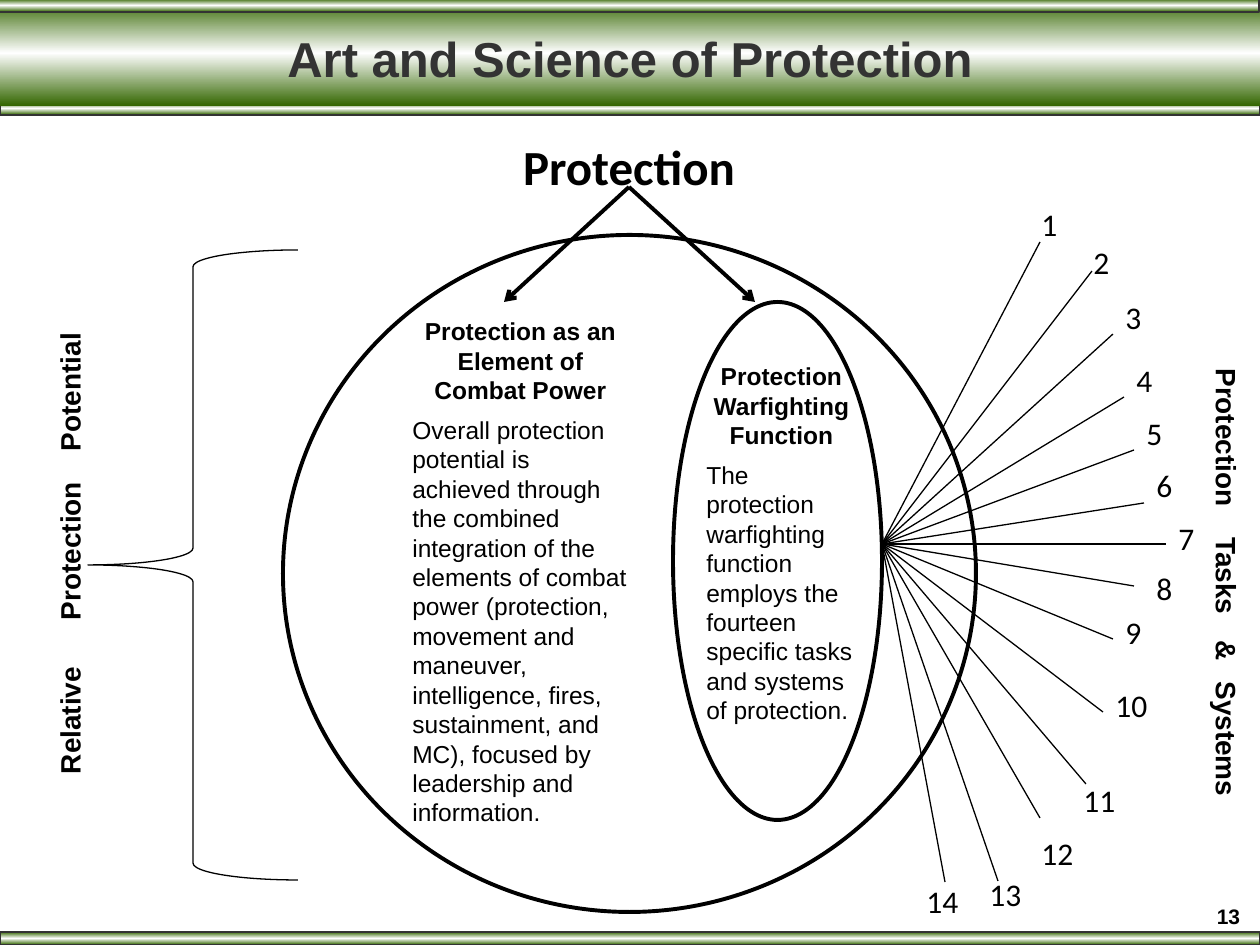
from copy import deepcopy
from dataclasses import dataclass
from lxml.etree import SubElement as Sub
from pptx import Presentation
from pptx.dml.color import RGBColor as RGB
from pptx.enum.shapes import MSO_CONNECTOR as Link, MSO_SHAPE as Kind
from pptx.enum.text import MSO_ANCHOR as Anchor, PP_ALIGN as Align
from pptx.oxml.ns import qn
from pptx.util import Pt

EMU = 914400 / 126


@dataclass(frozen=True)
class Theme:
    green: str = "336600"
    white: str = "FFFFFF"
    black: str = "000000"
    gray: str = "333333"
    sans: str = "Arial"
    soft: str = "Calibri"
    head: int = 28
    num: int = 18
    side: int = 16
    body: int = 14
    page: int = 12
    thin: float = 0.75
    bold: float = 2.25


T = Theme()

# Boxes are left, top, width, height in px
BARS = [((0, 102, 1260, 13), True), ((0, 932, 1260, 13), True),
        ((0, 0, 1260, 106), False), ((-1, -1, 1260, 13), True)]
OVALS = [(283, 235, 693, 677), (673, 302, 209, 518)]
BRACE = (88, 250, 210, 630)

PANELS = [
    ((400, 310, 241, 475), "Protection as an Element of Combat Power",
     "Overall protection potential is achieved through the combined "
     "integration of the elements of combat power (protection, movement and "
     "maneuver, intelligence, fires, sustainment, and MC), focused by "
     "leadership and information."),
    ((694, 355, 175, 315), "Protection Warfighting Function",
     "The protection warfighting function employs the fourteen specific "
     "tasks and systems of protection."),
]

# Words of each turned label, with the tab stops between them
SIDES = [
    ((964, 595, 525, 47), 90, ["Protection", "Tasks", "&", "Systems"],
     [169, 272, 313]),
    ((-229, 464, 598, 47), 270, ["Relative", "Protection", "Potential"],
     [154, 323]),
]

HUB = (882, 544)
# Ray end, then label left, top and width; numbered in order
RAYS = [
    ((1040, 242), (1029, 199, 42)), ((1092, 271), (1081, 237, 42)),
    ((1113, 334), (1113, 292, 32)), ((1124, 397), (1124, 355, 42)),
    ((1134, 450), (1134, 408, 42)), ((1144, 503), (1144, 460, 42)),
    ((1166, 544), (1166, 513, 42)), ((1134, 586), (1144, 563, 42)),
    ((1113, 639), (1113, 607, 42)), ((1103, 712), (1103, 680, 63)),
    ((1086, 784), (1071, 775, 73)), ((1040, 818), (1029, 828, 73)),
    ((998, 881), (977, 869, 105)), ((945, 882), (914, 876, 105)),
]
PEAK = (629, 187)
TIPS = [(755, 302), (504, 302)]


def emu(*nums):
    return [round(n * EMU) for n in nums]


def stroke(line, width, color=T.black):
    line.color.rgb = RGB.from_string(color)
    line.width = Pt(width)


def shape(kind, box):
    item = slide.shapes.add_shape(kind, *emu(*box))
    item.shadow.inherit = False
    return item


def bar(box, edged):
    """Draw a strip shaded green, white, green from top to bottom."""
    item = shape(Kind.RECTANGLE, box)
    item.fill.gradient()
    item.fill.gradient_angle = 90
    for stop in item.fill.gradient_stops:
        stop.color.rgb = RGB.from_string(T.green)
    first = item._element.spPr.find(".//" + qn("a:gs"))
    first.addnext(deepcopy(first))
    mid = item.fill.gradient_stops[1]
    mid.position = 0.5
    mid.color.rgb = RGB.from_string(T.white)
    if edged:
        stroke(item.line, T.thin, T.gray)
    else:
        item.line.fill.background()


def link(start, end, width, arrow=False):
    item = slide.shapes.add_connector(Link.STRAIGHT, *emu(*start, *end))
    stroke(item.line, width)
    if arrow:
        Sub(item.line._get_or_add_ln(), qn("a:tailEnd"), type="arrow")
    Sub(item._element.spPr, qn("a:effectLst"))


def put(para, words, size, font=T.sans, bold=True, color=T.black, **form):
    """Fill a paragraph; form holds its paragraph settings."""
    para.text = words
    look = {"size": Pt(size), "name": font, "bold": bold}
    for key, val in look.items():
        setattr(para.font, key, val)
    para.font.color.rgb = RGB.from_string(color)
    for key, val in form.items():
        setattr(para, key, val)


def frame(box, turn=0, wrap=True):
    item = slide.shapes.add_textbox(*emu(*box))
    item.rotation = turn
    item.text_frame.word_wrap = wrap
    return item.text_frame


deck = Presentation()
deck.slide_width, deck.slide_height = emu(1260, 945)
slide = deck.slides.add_slide(deck.slide_layouts[6])

for box, edged in BARS:
    bar(box, edged)

for box in OVALS:
    oval = shape(Kind.OVAL, box)
    oval.fill.solid()
    oval.fill.fore_color.rgb = RGB.from_string(T.white)
    stroke(oval.line, T.bold)

for box, head, body in PANELS:
    text = frame(box)
    put(text.paragraphs[0], head, T.body, alignment=Align.CENTER,
        space_after=Pt(6))
    put(text.add_paragraph(), body, T.body, bold=False, space_after=Pt(10))

brace = shape(Kind.LEFT_BRACE, BRACE)
brace.adjustments[0], brace.adjustments[1] = 0.08, 0.5
brace.fill.background()
stroke(brace.line, T.thin)

for num, (end, (left, top, wide)) in enumerate(RAYS, 1):
    link(HUB, end, T.thin)
    put(frame((left, top, wide, 51), wrap=False).paragraphs[0],
        str(num), T.num, T.soft, False)

for box, turn, words, stops in SIDES:
    para = frame(box, turn).paragraphs[0]
    tabs = Sub(para._p.get_or_add_pPr(), qn("a:tabLst"))
    for pos in emu(*stops):
        Sub(tabs, qn("a:tab"), pos=str(pos), algn="l")
    put(para, "\t".join(words), T.side)

put(frame((508, 130, 242, 72)).paragraphs[0], "Protection", T.head, T.soft,
    alignment=Align.CENTER)
for tip in TIPS:
    link(PEAK, tip, T.bold, arrow=True)

title = frame((63, 10, 1134, 95))
title.vertical_anchor = Anchor.MIDDLE
put(title.paragraphs[0], "Art and Science of Protection", T.head,
    color=T.gray, alignment=Align.CENTER)
put(frame((1197, 897, 63, 42)).paragraphs[0], "13", T.page,
    alignment=Align.CENTER)

deck.save("out.pptx")
